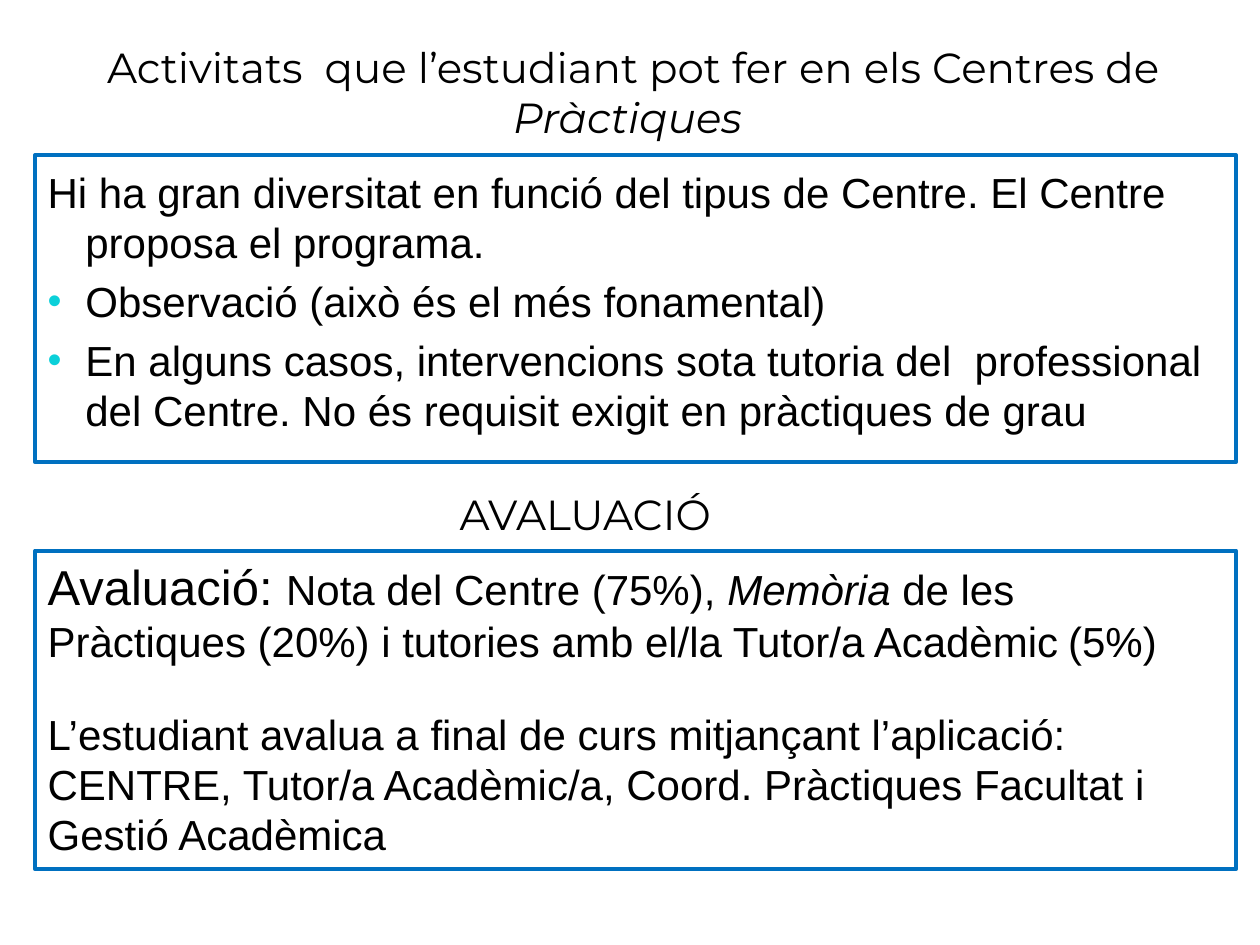
from dataclasses import dataclass, field

from lxml import etree
from pptx import Presentation
from pptx import util as u
from pptx.dml.color import RGBColor
from pptx.enum import shapes, text
from pptx.oxml.ns import qn

COLORS = {"text": "000000", "border": "0070C0", "bullet": "0BD0D9"}
INDENT = 0.3
BOX_LEFT, BOX_WIDTH = 0.28, 9.53


@dataclass
class Run:
    text: str
    size: float = 24
    italic: bool = False


@dataclass
class Para:
    runs: list[Run]
    before: float = 0
    hanging: bool = False
    bullet: bool = False


@dataclass
class Block:
    at: tuple[float, float, float, float]
    paras: list[Para] = field(default_factory=list)
    font: str = "Arial"
    align: text.PP_ALIGN = text.PP_ALIGN.LEFT
    framed: bool = False
    top_inset: float = 0.05


def rgb(name: str) -> RGBColor:
    return RGBColor.from_string(COLORS[name])


def set_indent(p, bullet: bool) -> None:
    """Hang the first line and, if asked, put a coloured bullet in the gap."""
    ppr = p._p.get_or_add_pPr()
    ppr.set("marL", str(u.Inches(INDENT)))
    ppr.set("indent", str(u.Inches(-INDENT)))
    if bullet:
        clr = etree.SubElement(ppr, qn("a:buClr"))
        etree.SubElement(clr, qn("a:srgbClr"), val=COLORS["bullet"])
        etree.SubElement(ppr, qn("a:buSzPct"), val="95000")
        etree.SubElement(ppr, qn("a:buFont"), typeface="Arial")
        etree.SubElement(ppr, qn("a:buChar"), char="•")
    else:
        etree.SubElement(ppr, qn("a:buNone"))


def write_para(p, para: Para, block: Block) -> None:
    p.alignment = block.align
    if para.hanging:
        set_indent(p, para.bullet)
    if para.before:
        p.space_before = u.Pt(para.before)
    for run in para.runs:
        r = p.add_run()
        r.text = run.text
        style = {"name": block.font, "size": u.Pt(run.size), "italic": run.italic}
        for key, value in style.items():
            setattr(r.font, key, value)
        r.font.color.rgb = rgb("text")


def draw_block(s, block: Block) -> None:
    at = [u.Inches(v) for v in block.at]
    if block.framed:
        sp = s.shapes.add_shape(shapes.MSO_SHAPE.RECTANGLE, *at)
        sp.shadow.inherit = False
        sp.fill.background()
        sp.line.color.rgb = rgb("border")
        sp.line.width = u.Pt(2.25)
    else:
        sp = s.shapes.add_textbox(*at)
    tf = sp.text_frame
    frame = {"word_wrap": True, "vertical_anchor": text.MSO_ANCHOR.TOP,
             "margin_top": u.Inches(block.top_inset)}
    for key, value in frame.items():
        setattr(tf, key, value)
    for i, para in enumerate(block.paras):
        write_para(tf.paragraphs[0] if i == 0 else tf.add_paragraph(), para, block)


TITLE = {"font": "Montserrat", "align": text.PP_ALIGN.CENTER}

BLOCKS = [
    # Activities: heading and framed list
    Block((0.6, 0.28, 8.85, 1), [Para([
        Run("Activitats  que l’estudiant pot fer en els Centres de "),
        Run("Pràctiques ", italic=True)])], **TITLE),
    Block((BOX_LEFT, 1.23, BOX_WIDTH, 2.44), [
        Para([Run("Hi ha gran diversitat en funció del tipus de Centre. "
                  "El Centre proposa el programa.")], hanging=True),
        Para([Run("Observació (això és el més fonamental)")],
             before=4.8, hanging=True, bullet=True),
        Para([Run("En alguns casos, intervencions sota tutoria del  professional "
                  "del Centre. No és requisit exigit en pràctiques de grau")],
             before=4.8, hanging=True, bullet=True),
    ], framed=True, top_inset=0.09),
    # Assessment: heading and framed text
    Block((2.56, 3.83, 4.17, 0.47), [Para([Run("AVALUACIÓ")])], **TITLE),
    Block((BOX_LEFT, 4.37, BOX_WIDTH, 2.53), [
        Para([Run("Avaluació: ", 28), Run("Nota del Centre (75%), "),
              Run("Memòria", italic=True),
              Run(" de les Pràctiques (20%) i tutories amb el/la Tutor/a Acadèmic"),
              Run(" ", 20), Run("(5%)")]),
        Para([Run("L’estudiant avalua a final de curs mitjançant l’aplicació:")],
             before=24),
        Para([Run("CENTRE, Tutor/a Acadèmic/a, Coord. Pràctiques Facultat i "
                  "Gestió Acadèmica")]),
    ], framed=True),
]


def main() -> None:
    prs = Presentation()
    prs.slide_width, prs.slide_height = u.Inches(10), u.Inches(7.5)
    s = prs.slides.add_slide(prs.slide_layouts[6])
    for block in BLOCKS:
        draw_block(s, block)
    prs.save("out.pptx")


if __name__ == "__main__":
    main()
